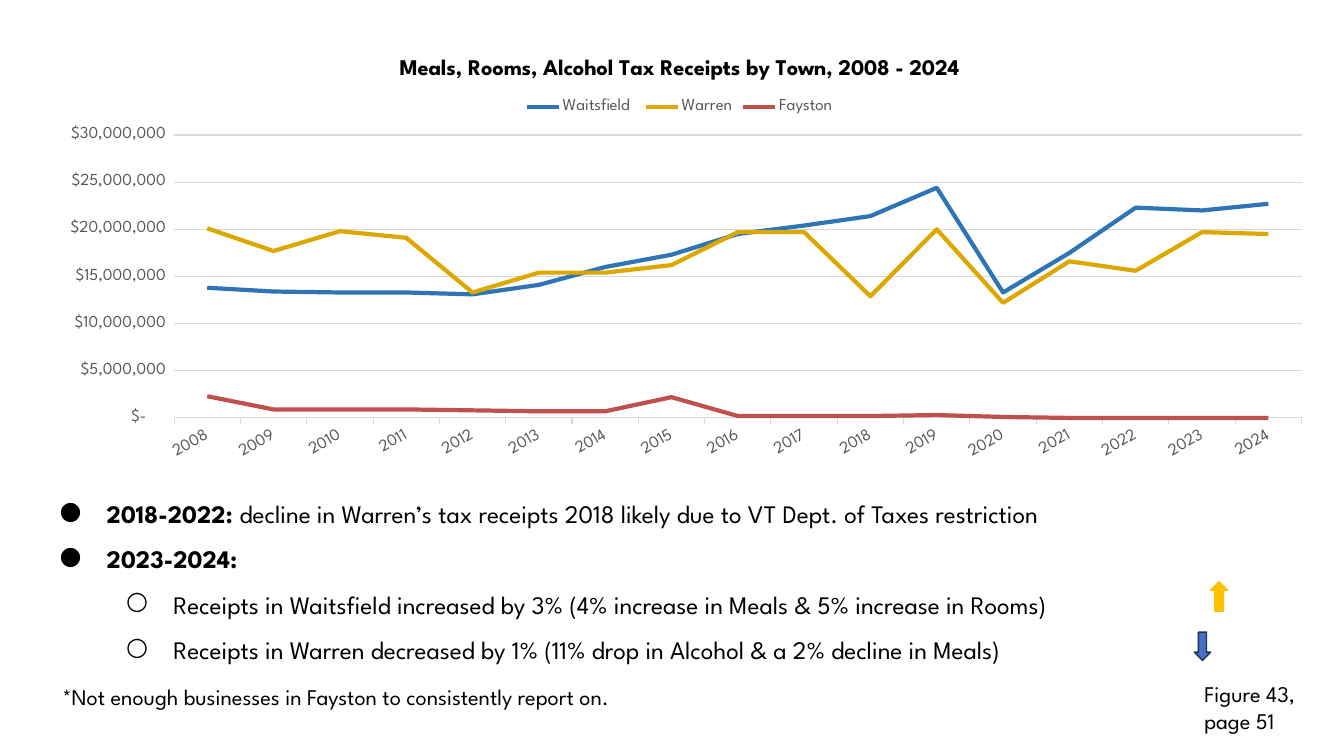
from lxml.etree import SubElement, fromstring
from pptx import Presentation
from pptx.chart.data import CategoryChartData
from pptx.dml.color import RGBColor
from pptx.enum.chart import XL_CHART_TYPE, XL_LEGEND_POSITION, XL_TICK_MARK
from pptx.enum.shapes import MSO_SHAPE
from pptx.enum.text import MSO_ANCHOR, MSO_AUTO_SIZE
from pptx.oxml.ns import nsdecls, qn
from pptx.util import Cm, Pt

FACE = "League Spartan"
BLACK, GRAY, PALE = "000000", "595959", "D9D9D9"
MONEY = '_("$"* #,##0_);_("$"* \\(#,##0\\);_("$"* "-"??_);_(@_)'
TOWNS = [
    ("Waitsfield ", "2E75B6", [13.8, 13.4, 13.3, 13.3, 13.1, 14.1, 16, 17.3, 19.5,
                               20.4, 21.4, 24.4, 13.3, 17.5, 22.3, 22, 22.7]),
    ("Warren", "DCA800", [20.1, 17.7, 19.8, 19.1, 13.3, 15.4, 15.4, 16.2, 19.7,
                          19.7, 12.9, 20, 12.2, 16.6, 15.6, 19.7, 19.5]),
    ("Fayston", "C0504D", [2.3, 0.9, 0.9, 0.9, 0.8, 0.7, 0.7, 2.2, 0.2,
                           0.2, 0.2, 0.3, 0.1, 0, 0, 0, 0]),
]
POINTS = [
    (0, "2018-2022: ", "decline in Warren’s tax receipts 2018 likely due to VT Dept. of Taxes restriction"),
    (0, "2023-2024:", ""),
    (1, "", "Receipts in Waitsfield increased by 3% (4% increase in Meals & 5% increase in Rooms)"),
    (1, "", "Receipts in Warren decreased by 1% (11% drop in Alcohol & a 2% decline in Meals)"),
]


def paint(code):
    return RGBColor.from_string(code)


def style(font, size=12, hue=GRAY, bold=False):
    font.name, font.size, font.bold = FACE, Pt(size), bold
    font.color.rgb = paint(hue)


def write(para, text, **form):
    run = para.add_run()
    run.text = text
    style(run.font, **form)


def rule(line, hue, width):
    line.color.rgb = paint(hue)
    line.width = Pt(width)


def place(box):
    return [Cm(part) for part in box]


def bullet(para, level):
    props = para._p.get_or_add_pPr()
    props.set("marL", str(Cm((1.7, 3.38)[level])))
    props.set("indent", str(-Cm(1.19)))
    tint = SubElement(props, qn("a:buClr"))
    SubElement(tint, qn("a:srgbClr"), val=BLACK)
    SubElement(props, qn("a:buFont"), typeface=FACE)
    SubElement(props, qn("a:buChar"), char="●○"[level])


def add_list(slide, box):
    body = slide.placeholders[1]
    body.left, body.top, body.width, body.height = place(box)
    frame = body.text_frame
    frame.auto_size, frame.vertical_anchor = MSO_AUTO_SIZE.NONE, MSO_ANCHOR.TOP
    frame.margin_left = frame.margin_right = Cm(0.33)
    frame.margin_top = frame.margin_bottom = Cm(0.33)
    for index, (level, lead, text) in enumerate(POINTS):
        para = frame.add_paragraph() if index else frame.paragraphs[0]
        para.level = level
        bullet(para, level)
        para.line_spacing, para.space_before = 1.5, Pt(0)
        if lead:
            write(para, lead, size=18, hue=BLACK, bold=True)
        if text:
            write(para, text, size=18, hue=BLACK)


def add_note(slide, box, text):
    frame = slide.shapes.add_textbox(*place(box)).text_frame
    frame.word_wrap = True
    frame.auto_size = MSO_AUTO_SIZE.SHAPE_TO_FIT_TEXT
    write(frame.paragraphs[0], text, size=16, hue=BLACK)


def add_arrow(slide, box, kind, fill, edge):
    arrow = slide.shapes.add_shape(kind, *place(box))
    arrow.shadow.inherit = False
    arrow.fill.solid()
    arrow.fill.fore_color.rgb = paint(fill)
    rule(arrow.line, edge, 1)


def set_plot(chart, left, top, width, height):
    area = chart._chartSpace.chart.plotArea
    for old in area.findall(qn("c:layout")):
        area.remove(old)
    area.insert(0, fromstring(
        f'<c:layout {nsdecls("c")}><c:manualLayout><c:layoutTarget val="inner"/>'
        f'<c:xMode val="edge"/><c:yMode val="edge"/><c:x val="{left}"/><c:y val="{top}"/>'
        f'<c:w val="{width}"/><c:h val="{height}"/></c:manualLayout></c:layout>'))


def set_back(chart):
    chart._chartSpace.find(qn("c:txPr")).addprevious(fromstring(
        f'<c:spPr {nsdecls("c", "a")}><a:solidFill><a:srgbClr val="FFFFFF"/></a:solidFill>'
        '<a:ln><a:noFill/></a:ln></c:spPr>'))


def add_graph(slide, box):
    data = CategoryChartData(number_format=MONEY)
    data.categories = [str(year) for year in range(2008, 2025)]
    for name, hue, sums in TOWNS:
        data.add_series(name, [round(value * 1_000_000) for value in sums])
    chart = slide.shapes.add_chart(XL_CHART_TYPE.LINE, *place(box), data).chart
    style(chart.font, size=10, hue=BLACK)
    set_back(chart)
    set_plot(chart, 0.104, 0.223, 0.883, 0.659)

    chart.has_title = True
    write(chart.chart_title.text_frame.paragraphs[0],
          "Meals, Rooms, Alcohol Tax Receipts by Town, 2008 - 2024",
          size=16, hue=BLACK, bold=True)
    chart.has_legend = True
    chart.legend.position = XL_LEGEND_POSITION.TOP
    chart.legend.include_in_layout = False
    style(chart.legend.font)

    years, money = chart.category_axis, chart.value_axis
    for axis in (years, money):
        style(axis.tick_labels.font)
    years.major_tick_mark = XL_TICK_MARK.OUTSIDE
    rule(years.format.line, PALE, 0.75)
    years._element.find(qn("c:txPr")).find(qn("a:bodyPr")).set("rot", "-1800000")
    money.major_tick_mark = XL_TICK_MARK.NONE
    money.minimum_scale, money.maximum_scale, money.major_unit = 0, 30_000_000, 5_000_000
    money.tick_labels.number_format = MONEY
    money.tick_labels.number_format_is_linked = False
    money.format.line.fill.background()
    rule(money.major_gridlines.format.line, PALE, 0.75)

    plot = chart.plots[0]
    plot.vary_by_categories = False
    for series, (name, hue, sums) in zip(plot.series, TOWNS):
        series.smooth = False
        rule(series.format.line, hue, 3)


def main():
    deck = Presentation()
    deck.slide_width, deck.slide_height = Cm(33.87), Cm(19.05)
    slide = deck.slides.add_slide(deck.slide_layouts[1])
    title = slide.shapes.title._element
    title.getparent().remove(title)
    add_list(slide, (0.66, 11.84, 32.44, 5.18))
    add_arrow(slide, (30.51, 14.66, 0.43, 0.74), MSO_SHAPE.UP_ARROW, "FFC000", "FFC000")
    add_arrow(slide, (30.1, 15.93, 0.41, 0.71), MSO_SHAPE.DOWN_ARROW, "4472C4", "1E3256")
    add_note(slide, (1.32, 17.09, 29.34, 0.94),
             "*Not enough businesses in Fayston to consistently report on.")
    add_graph(slide, (1.04, 0.99, 32.18, 10.82))
    add_note(slide, (30.1, 17.02, 3.53, 1.63), "Figure 43, page 51")
    deck.save("out.pptx")


if __name__ == "__main__":
    main()
